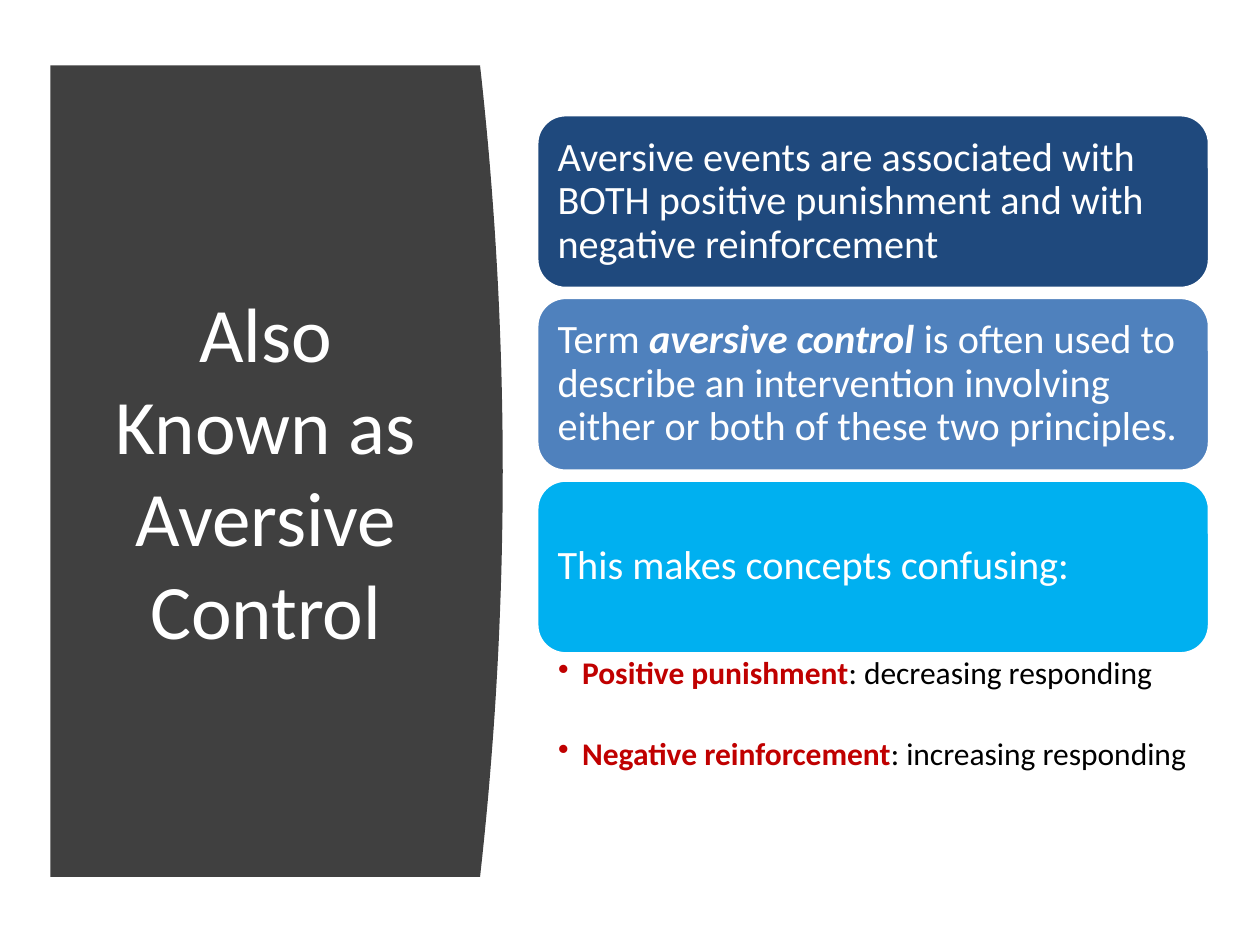
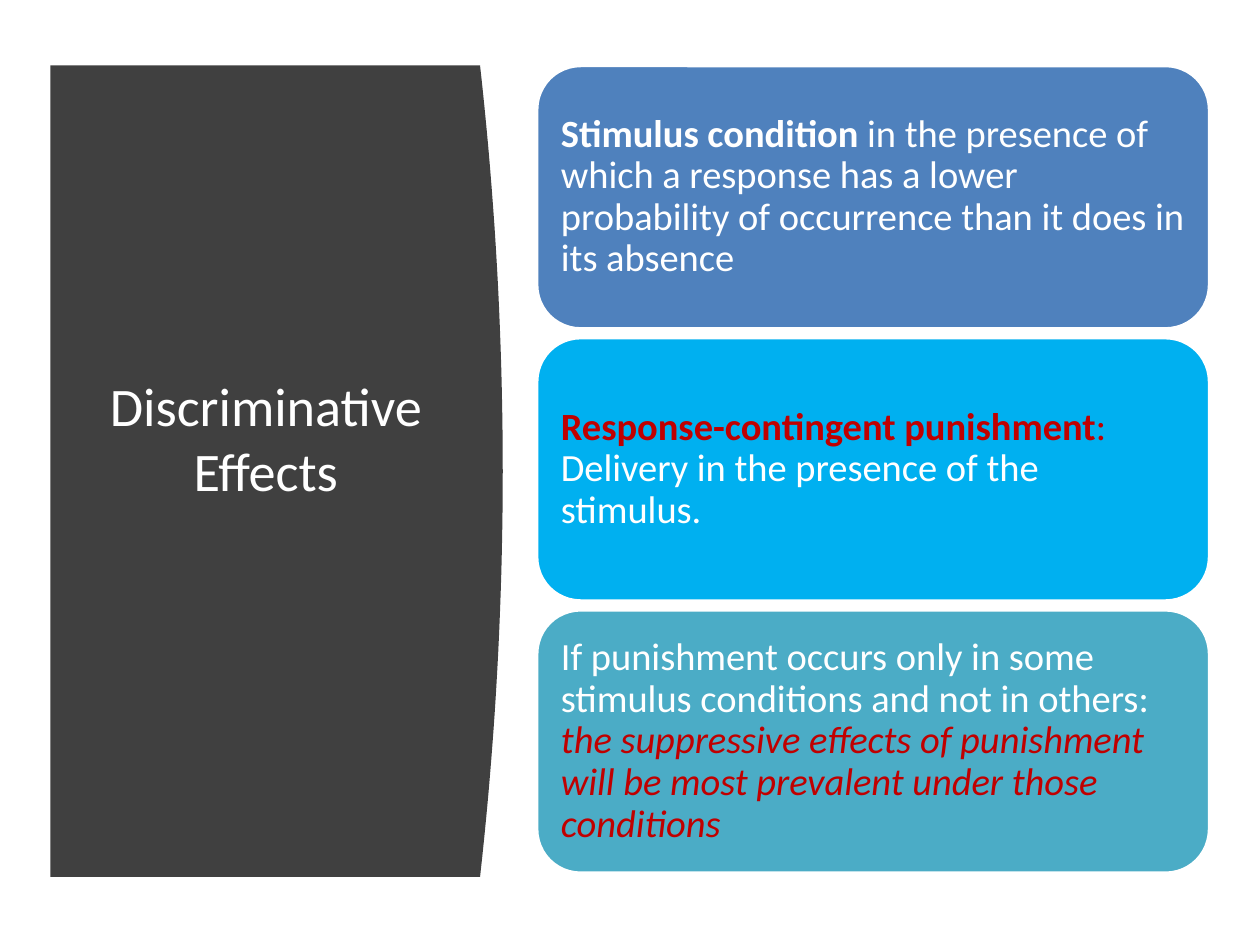
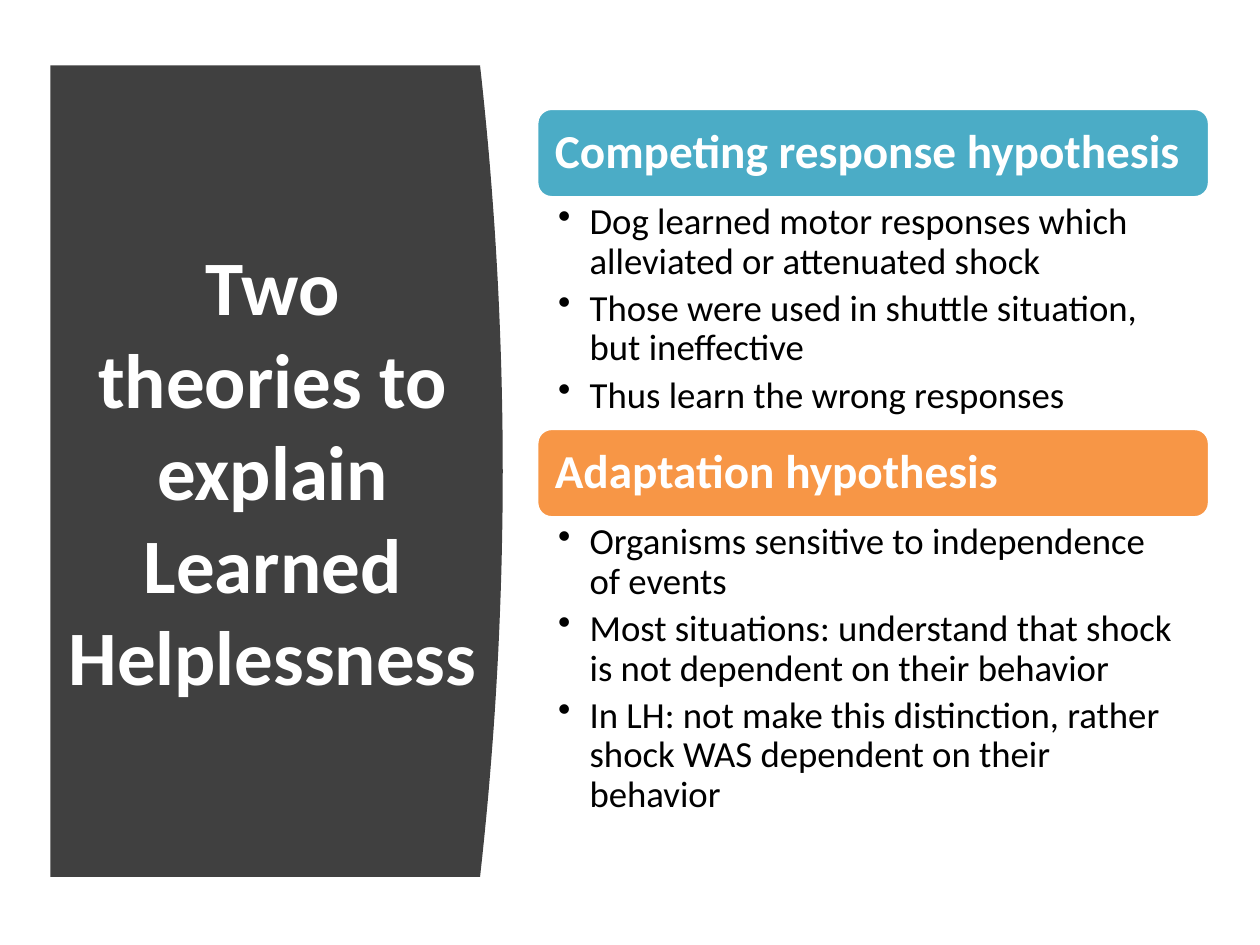
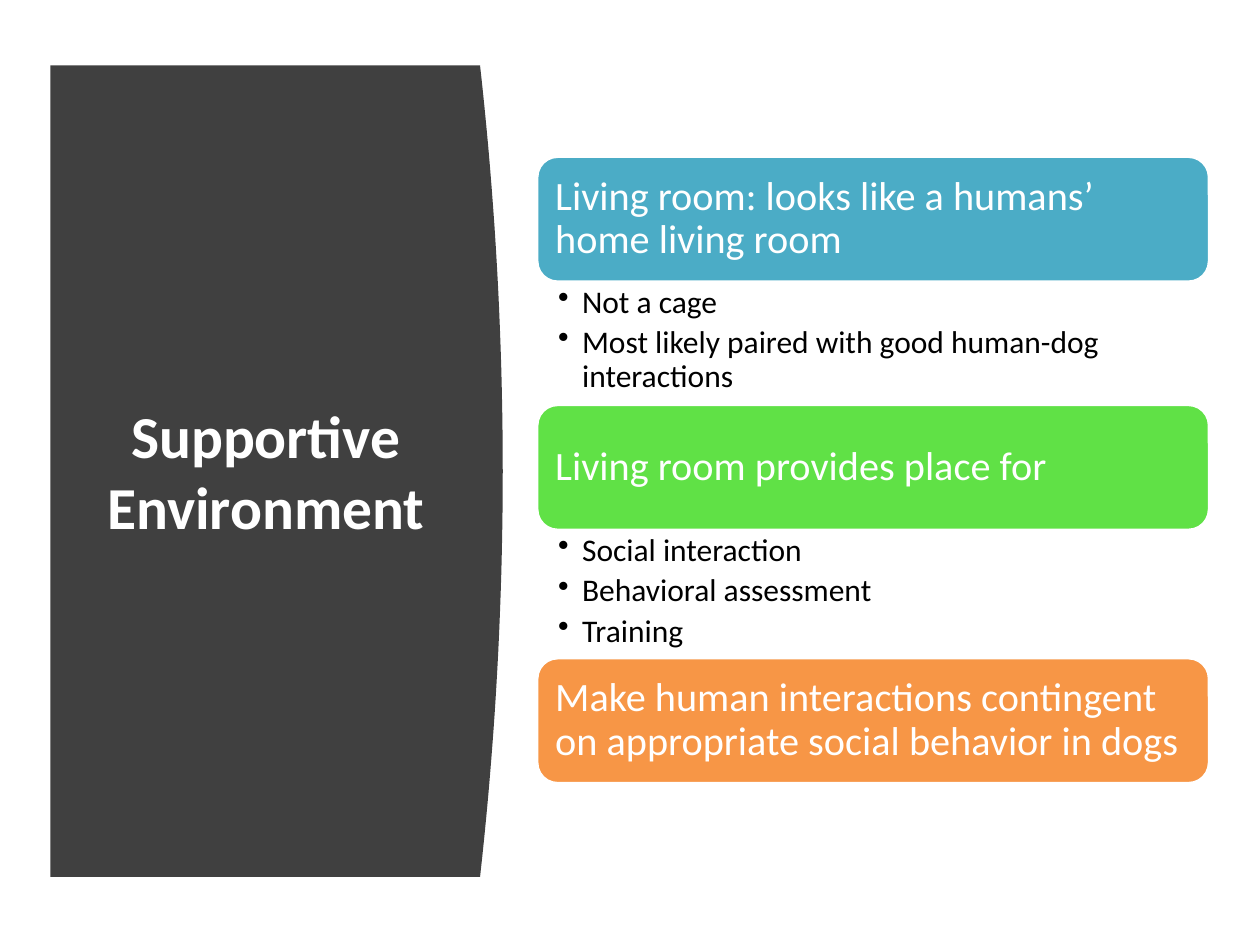
from pptx import Presentation
from pptx.dml.color import RGBColor
from pptx.enum.shapes import MSO_SHAPE
from pptx.enum.text import MSO_ANCHOR, PP_ALIGN
from pptx.oxml.ns import qn
from pptx.util import Inches, Pt
from lxml import etree

ROUNDED = MSO_SHAPE.ROUNDED_RECTANGLE
TOP, MIDDLE = MSO_ANCHOR.TOP, MSO_ANCHOR.MIDDLE
LEFT, CENTER = PP_ALIGN.LEFT, PP_ALIGN.CENTER

FONT = "Calibri"
WHITE, BLACK, CHARCOAL, RED = "FFFFFF", "000000", "404040", "C00000"
NAVY, BLUE, SKY = "1F497D", "4F81BD", "00B0F0"
TEAL, ORANGE, GREEN = "4BACC6", "F79646", "60E146"

PANEL = (0.4, 0.52, 3.59, 6.44)
PANEL_BULGE = 0.18
PANEL_STEPS = 40
TITLE = (0.71, 1.11, 2.8, 5.24)
WIDE_TITLE = (0.42, 1.11, 3.49, 5.24)
STACK_LEFT, STACK_WIDTH = 4.26, 5.34
CARD_GAP = 0.07
LIST_LEFT_INSET = 0.17

BOLD = {"bold": True}
RED_BOLD = {"bold": True, "color": RED}
RED_ITALIC = {"italic": True, "color": RED}

MEDIUM = {"card_size": 23, "card_inset": 0.1, "list_size": 18,
          "list_indent": 0.19, "list_right": 0.18, "list_pad": 0.03}
SMALL = {**MEDIUM, "card_size": 22, "card_inset": 0.09}
LARGE = {"card_size": 27, "card_inset": 0.11, "list_size": 21,
         "list_indent": 0.25, "list_right": 0.21, "list_pad": 0.04}


def rgb(value):
    return RGBColor.from_string(value)


def set_frame(tf, anchor, insets):
    tf.word_wrap = True
    tf.vertical_anchor = anchor
    for side, inset in zip(("left", "top", "right", "bottom"), insets):
        setattr(tf, f"margin_{side}", Inches(inset))


def add_runs(p, runs, size, color):
    for text, changes in runs:
        values = {"name": FONT, "size": Pt(size), "bold": False,
                  "italic": False, "color": color, **changes}
        run_color = values.pop("color")
        for i, line in enumerate(text.split("\n")):
            if i:
                p.add_line_break()
            r = p.add_run()
            r.text = line
            r.font.color.rgb = rgb(run_color)
            for name, value in values.items():
                setattr(r.font, name, value)


def set_bullet(p, indent):
    p.level = 1
    pPr = p._p.get_or_add_pPr()
    pPr.set("marL", str(Inches(indent)))
    pPr.set("indent", str(-Inches(indent)))
    etree.SubElement(pPr, qn("a:buChar")).set("char", "•")


def add_panel(slide, box):
    x, y, w, h = box
    curve = []
    for i in range(PANEL_STEPS + 1):
        t = 2 * i / PANEL_STEPS - 1
        curve.append((Inches(x + w - PANEL_BULGE * t * t),
                      Inches(y + h * i / PANEL_STEPS)))
    builder = slide.shapes.build_freeform(Inches(x), Inches(y))
    builder.add_line_segments(curve + [(Inches(x), Inches(y + h))])
    sp = builder.convert_to_shape()
    sp.shadow.inherit = False
    sp.fill.solid()
    sp.fill.fore_color.rgb = rgb(CHARCOAL)
    sp.line.fill.background()


def add_title(slide, box, text, size, bold, bottom=0.05):
    sp = slide.shapes.add_textbox(*map(Inches, box))
    set_frame(sp.text_frame, MIDDLE, (0.1, 0.05, 0.1, bottom))
    p = sp.text_frame.paragraphs[0]
    p.alignment = CENTER
    add_runs(p, [(text, {"bold": bold})], size, WHITE)


def add_card(slide, box, color, runs, style):
    sp = slide.shapes.add_shape(ROUNDED, *map(Inches, box))
    sp.shadow.inherit = False
    sp.fill.solid()
    sp.fill.fore_color.rgb = rgb(color)
    sp.line.color.rgb = rgb(WHITE)
    sp.line.width = Pt(2)
    set_frame(sp.text_frame, MIDDLE, [style["card_inset"]] * 4)
    p = sp.text_frame.paragraphs[0]
    p.alignment = LEFT
    p.line_spacing = 0.9
    add_runs(p, runs, style["card_size"], WHITE)


def add_list(slide, box, items, style, space):
    sp = slide.shapes.add_textbox(*map(Inches, box))
    tf = sp.text_frame
    pad = style["list_pad"]
    set_frame(tf, TOP, (LIST_LEFT_INSET, pad, style["list_right"], pad))
    for i, runs in enumerate(items):
        p = tf.add_paragraph() if i else tf.paragraphs[0]
        p.line_spacing = 0.9
        p.space_after = Pt(space)
        set_bullet(p, style["list_indent"])
        add_runs(p, runs, style["list_size"], BLACK)


def add_stack(slide, top, card_height, sections, style, space=None):
    if space is None:
        space = 0.2 * style["list_size"]
    y = top
    for color, runs, items, list_height in sections:
        add_card(slide, (STACK_LEFT, y, STACK_WIDTH, card_height), color, runs, style)
        y += card_height
        if items:
            box = (STACK_LEFT, y, STACK_WIDTH, list_height)
            add_list(slide, box, items, style, space)
            y += list_height
        else:
            y += CARD_GAP


def plain(*texts):
    return [[(text, {})] for text in texts]


def add_panel_slide(prs, title, stack):
    slide = prs.slides.add_slide(prs.slide_layouts[6])
    add_panel(slide, PANEL)
    add_title(slide, **title)
    add_stack(slide, **stack)


SLIDES = [
    ({"box": TITLE, "text": "Also Known as Aversive Control", "size": 44, "bold": False},
     {"top": 0.91, "card_height": 1.38, "style": MEDIUM, "space": 26.5, "sections": [
         (NAVY, [("Aversive events are associated with BOTH positive punishment "
                  "and with negative reinforcement", {})], [], 0),
         (BLUE, [("Term ", {}),
                 ("aversive control", {"bold": True, "italic": True}),
                 (" is often used to describe an intervention involving either "
                  "or both of these two principles.", {})], [], 0),
         (SKY, [("This makes concepts confusing:", {})],
          [[("Positive punishment", RED_BOLD), (": decreasing responding", {})],
           [("Negative reinforcement", RED_BOLD), (": increasing responding", {})]], 1.35),
     ]}),
    ({"box": TITLE, "text": "Discriminative Effects", "size": 31, "bold": False,
      "bottom": 0.57},
     {"top": 0.52, "card_height": 2.09, "style": SMALL, "sections": [
         (BLUE, [("Stimulus condition ", BOLD),
                 ("in the presence of which a response has a lower probability "
                  "of occurrence than it does in its absence", {})], [], 0),
         (SKY, [("Response-contingent punishment", RED_BOLD),
                (": ", {"color": RED}),
                ("Delivery in the presence of the stimulus.", {})], [], 0),
         (TEAL, [("If punishment occurs only in some stimulus conditions "
                  "and not in others: ", {}),
                 ("the suppressive effects of punishment will be most prevalent "
                  "under those conditions", RED_ITALIC)], [], 0),
     ]}),
    ({"box": WIDE_TITLE, "text": "Two theories to explain\nLearned Helplessness",
      "size": 44, "bold": True},
     {"top": 0.86, "card_height": 0.71, "style": LARGE, "sections": [
         (TEAL, [("Competing response hypothesis", BOLD)],
          plain("Dog learned motor responses which alleviated or attenuated shock",
                "Those were used in shuttle situation, but ineffective",
                "Thus learn the wrong responses"), 1.83),
         (ORANGE, [("Adaptation hypothesis", BOLD)],
          plain("Organisms sensitive to independence of events",
                "Most situations: understand that shock is not dependent on their behavior",
                "In LH: not make this distinction, rather shock WAS dependent "
                "on their behavior"), 2.51),
     ]}),
    ({"box": TITLE, "text": "Supportive Environment", "size": 34, "bold": True},
     {"top": 1.24, "card_height": 1, "style": MEDIUM, "sections": [
         (TEAL, [("Living room: looks like a humans’ home living room", {})],
          plain("Not a cage", "Most likely paired with good human-dog interactions"), 0.97),
         (GREEN, [("Living room provides place for", {})],
          plain("Social interaction", "Behavioral assessment", "Training"), 1.01),
         (ORANGE, [("Make human interactions contingent on appropriate "
                    "social behavior in dogs", {})], [], 0),
     ]}),
]


def main():
    prs = Presentation()
    prs.slide_width, prs.slide_height = Inches(10), Inches(7.5)
    for title, stack in SLIDES:
        add_panel_slide(prs, title, stack)
    prs.save("out.pptx")


if __name__ == "__main__":
    main()
